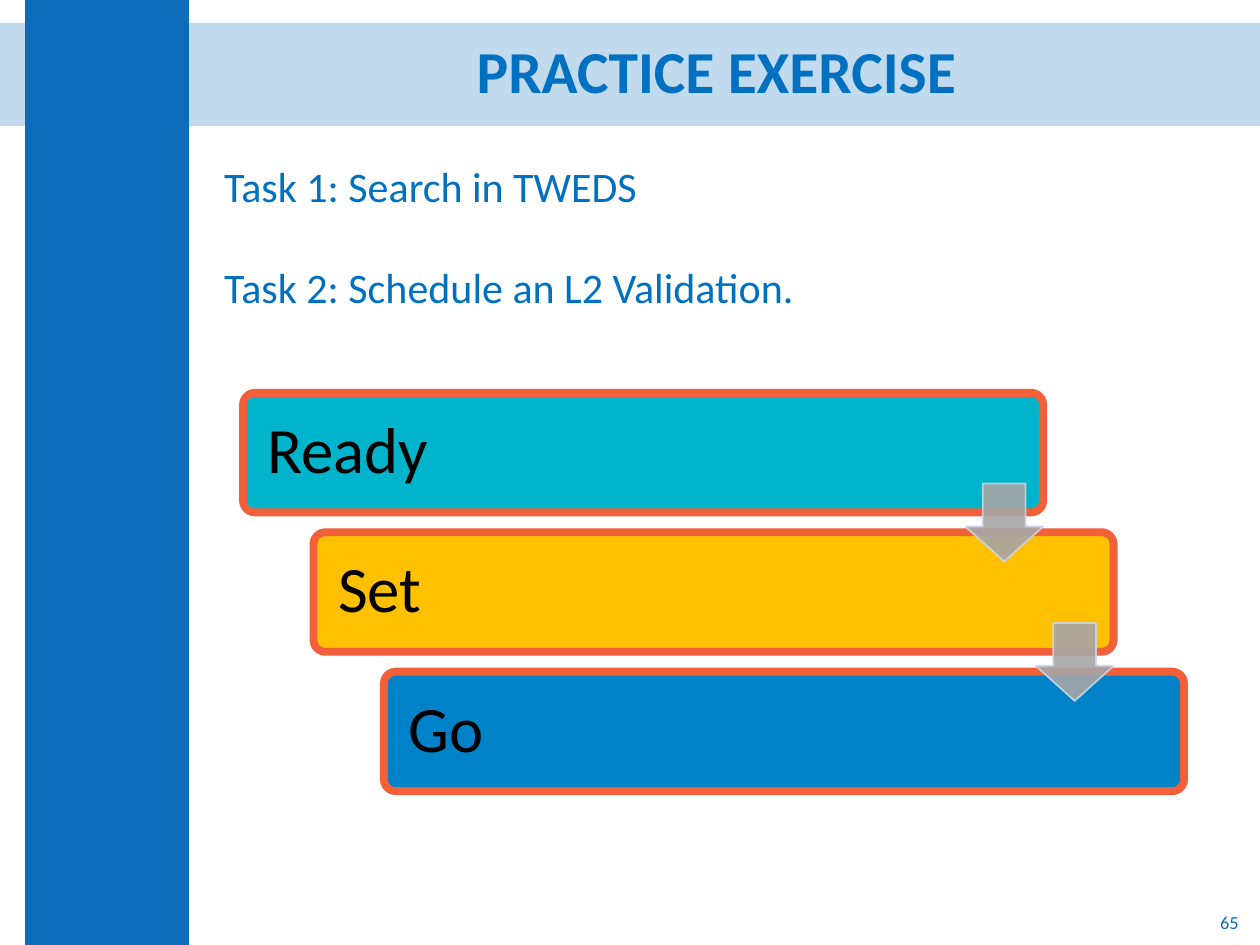
from lxml import etree
from pptx import Presentation
from pptx.dml.color import RGBColor
from pptx.enum.shapes import MSO_SHAPE as Shape
from pptx.enum.text import MSO_ANCHOR as Anchor, MSO_AUTO_SIZE as AutoSize, PP_ALIGN as Align
from pptx.oxml.ns import qn
from pptx.util import Cm, Pt

BAND_BLUE = RGBColor(0x0D, 0x6C, 0xB9)
TEXT_BLUE = RGBColor(0x00, 0x70, 0xC0)
BLACK = RGBColor(0x00, 0x00, 0x00)
TEAL = RGBColor(0x00, 0xB4, 0xCB)
AMBER = RGBColor(0xFF, 0xC0, 0x00)
STEP_BLUE = RGBColor(0x00, 0x82, 0xC8)
ORANGE = RGBColor(0xF1, 0x60, 0x38)
ARROW_GRAY = RGBColor(0xA6, 0xA6, 0xA6)
ARROW_EDGE = RGBColor(0xCC, 0xD4, 0xE6)

STEPS = [("Ready", TEAL), ("Set", AMBER), ("Go", STEP_BLUE)]
STEP_LEFT, STEP_TOP = 4.9, 7.92
STEP_WIDTH, STEP_HEIGHT = 16.13, 2.41
SHIFT_RIGHT, SHIFT_DOWN = 1.42, 2.81
ARROW_SIZE, ARROW_DROP = 1.57, 1.83


def place(shape, left, top, width, height):
    shape.left, shape.top = Cm(left), Cm(top)
    shape.width, shape.height = Cm(width), Cm(height)


def set_opacity(fill_format, percent):
    color = fill_format._xPr.find(qn("a:solidFill"))[0]
    etree.SubElement(color, qn("a:alpha"), val=str(percent * 1000))


def write_text(shape, *lines, size, color, bold=False, align=Align.LEFT,
               anchor=Anchor.MIDDLE, line_spacing=1.0, gap=0, left_inset=0.25):
    """Write one unbulleted paragraph per line, with gap points between them."""
    frame = shape.text_frame
    frame.word_wrap = True
    frame.auto_size = AutoSize.NONE
    frame.vertical_anchor = anchor
    frame.margin_left = Cm(left_inset)
    for index, line in enumerate(lines):
        paragraph = frame.add_paragraph() if index else frame.paragraphs[0]
        paragraph.text = line
        paragraph.alignment = align
        paragraph.line_spacing = line_spacing
        paragraph.space_before = Pt(gap if index else 0)
        properties = paragraph._p.get_or_add_pPr()
        properties.set("marL", "0")
        properties.set("indent", "0")
        etree.SubElement(properties, qn("a:buNone"))
        font = paragraph.font
        font.name, font.size, font.bold = "Calibri", Pt(size), bold
        font.color.rgb = color


def add_block(slide, kind, left, top, width, height, fill,
              line=None, line_width=1, opacity=100, adjustments=()):
    shape = slide.shapes.add_shape(kind, Cm(left), Cm(top), Cm(width), Cm(height))
    shape.shadow.inherit = False
    shape.fill.solid()
    shape.fill.fore_color.rgb = fill
    if line is None:
        shape.line.fill.background()
    else:
        shape.line.color.rgb = line
        shape.line.width = Pt(line_width)
    if opacity < 100:
        set_opacity(shape.fill, opacity)
    for index, value in enumerate(adjustments):
        shape.adjustments[index] = value
    return shape


def add_bands(slide):
    """Draw the two bands behind the placeholders."""
    bands = [
        add_block(slide, Shape.RECTANGLE, 0, 0.46, 25.4, 2.08, BAND_BLUE, opacity=25),
        add_block(slide, Shape.RECTANGLE, 0.51, 0, 3.3, 19.05, BAND_BLUE),
    ]
    for index, band in enumerate(bands):
        slide.shapes._spTree.insert(2 + index, band._element)


def add_staircase(slide):
    positions = [(STEP_LEFT + i * SHIFT_RIGHT, STEP_TOP + i * SHIFT_DOWN)
                 for i in range(len(STEPS))]
    for (label, fill), (left, top) in zip(STEPS, positions):
        step = add_block(slide, Shape.ROUNDED_RECTANGLE, left, top, STEP_WIDTH, STEP_HEIGHT,
                         fill, line=ORANGE, line_width=4.5, adjustments=[0.1])
        write_text(step, label, size=37, color=BLACK, line_spacing=0.9, left_inset=0.43)
    for left, top in positions[:-1]:
        arrow = add_block(slide, Shape.DOWN_ARROW, left + STEP_WIDTH - ARROW_SIZE,
                          top + ARROW_DROP, ARROW_SIZE, ARROW_SIZE, ARROW_GRAY,
                          line=ARROW_EDGE, opacity=90, adjustments=[0.55, 0.45])
        set_opacity(arrow.line.fill, 90)


def main():
    presentation = Presentation()
    presentation.slide_width, presentation.slide_height = Cm(25.4), Cm(19.05)
    slide = presentation.slides.add_slide(presentation.slide_layouts[1])
    add_bands(slide)

    title, tasks = slide.shapes.title, slide.placeholders[1]
    place(title, 3.76, 0.46, 21.64, 2.08)
    write_text(title, "PRACTICE EXERCISE ", size=34, color=TEXT_BLUE, bold=True,
               align=Align.CENTER, line_spacing=0.9)
    place(tasks, 4.27, 3.1, 20.7, 3.66)
    write_text(tasks, "Task 1: Search in TWEDS", "Task 2: Schedule an L2 Validation.",
               size=24, color=TEXT_BLUE, anchor=Anchor.TOP, gap=29)

    add_staircase(slide)
    page_number = slide.shapes.add_textbox(Cm(19.5), Cm(18.21), Cm(5.72), Cm(0.76))
    write_text(page_number, "65", size=10.5, color=BAND_BLUE, align=Align.RIGHT)
    presentation.save("out.pptx")


if __name__ == "__main__":
    main()
